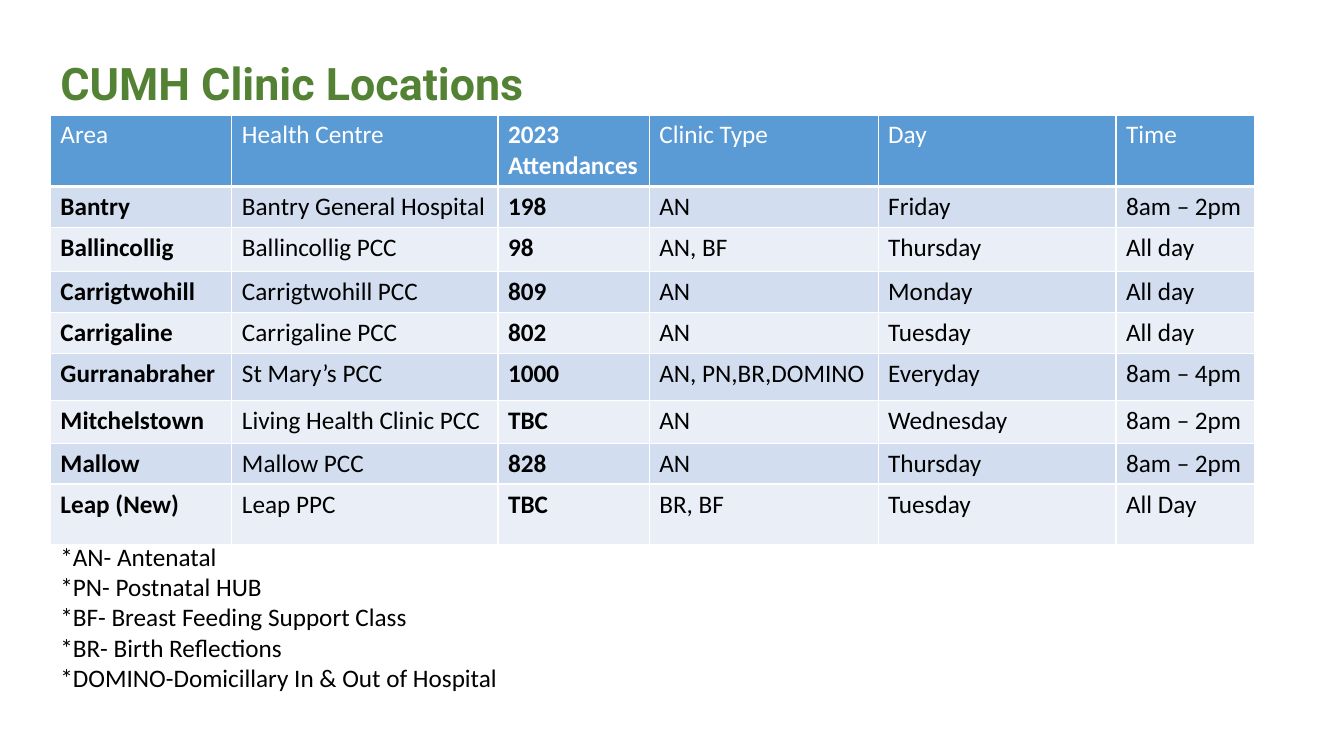
from lxml.etree import SubElement
from pptx import Presentation
from pptx.dml.color import RGBColor
from pptx.oxml.ns import qn
from pptx.util import Inches, Pt

AREAS = [
    ("Area", "Health Centre", "2023 Attendances", "Clinic Type", "Day", "Time"),
    ("Bantry", "Bantry General Hospital", "198", "AN", "Friday", "8am – 2pm"),
    ("Ballincollig", "Ballincollig PCC", "98", "AN, BF", "Thursday", "All day"),
    ("Carrigtwohill", "Carrigtwohill PCC", "809", "AN", "Monday", "All day"),
    ("Carrigaline", "Carrigaline PCC", "802", "AN", "Tuesday", "All day"),
    ("Gurranabraher", "St Mary’s PCC", "1000", "AN, PN,BR,DOMINO", "Everyday", "8am – 4pm"),
    ("Mitchelstown", "Living Health Clinic PCC", "TBC", "AN", "Wednesday", "8am – 2pm"),
    ("Mallow", "Mallow PCC", "828", "AN", "Thursday", "8am – 2pm"),
    ("Leap (New)", "Leap PPC", "TBC", "BR, BF", "Tuesday", "All Day"),
]
WIDTHS = [1.8, 2.64, 1.5, 2.27, 2.36, 1.37]
HEIGHTS = [0.37, 0.37, 0.44, 0.37, 0.37, 0.47, 0.42, 0.37, 0.6]
NOTES = [
    "*AN- Antenatal",
    "*PN- Postnatal HUB",
    "*BF- Breast Feeding Support Class",
    "*BR- Birth Reflections",
    "*DOMINO-Domicillary In & Out of Hospital",
]


def color(code):
    return RGBColor.from_string(code)


class Deck:
    white, black, green = "FFFFFF", "000000", "548235"
    head, bands = "5B9BD5", ("EAEFF7", "D2DEEF")

    def __init__(self, slide):
        self.slide = slide

    def style(self, frame, size, ink, bold=False, face="Calibri"):
        for para in frame.paragraphs:
            for run in para.runs:
                font = run.font
                font.name, font.size, font.bold = face, Pt(size), bold
                font.color.rgb = color(ink)

    def text(self, box, words, size, ink, bold=False, face="Calibri"):
        frame = self.slide.shapes.add_textbox(*map(Inches, box)).text_frame
        frame.word_wrap = True
        frame.text = words
        self.style(frame, size, ink, bold, face)

    def edge(self, cell, low):
        props = cell._tc.get_or_add_tcPr()
        for side, width in zip("LRTB", (1, 1, 1, low)):
            line = SubElement(props, qn("a:ln" + side), w=str(Pt(width)))
            fill = SubElement(line, qn("a:solidFill"))
            SubElement(fill, qn("a:srgbClr"), val=self.white)

    def table(self, box, rows, widths, heights, strong):
        shape = self.slide.shapes.add_table(
            len(rows), len(widths), *map(Inches, box))
        table = shape.table
        for col, width in zip(table.columns, widths):
            col.width = Inches(width)
        for row, height in zip(table.rows, heights):
            row.height = Inches(height)
        shape.height = Inches(box[3])
        for r, row in enumerate(rows):
            top = r == 0
            for c, words in enumerate(row):
                cell = table.cell(r, c)
                cell.text_frame.text = words
                bold = c in strong and not (top and c == 0)
                self.style(cell.text_frame, 18,
                           self.white if top else self.black, bold)
                self.edge(cell, 3 if top else 1)
                cell.fill.solid()
                cell.fill.fore_color.rgb = color(
                    self.head if top else self.bands[r % 2])


def main():
    show = Presentation()
    show.slide_width, show.slide_height = Inches(13.33), Inches(7.5)
    deck = Deck(show.slides.add_slide(show.slide_layouts[6]))

    # Clinic table, with area names and attendances in bold
    deck.table((0.5, 1.14, 11.94, 4.24), AREAS, WIDTHS, HEIGHTS, (0, 2))

    # Title
    deck.text((0.5, 0.5, 5.3, 0.64), "CUMH Clinic Locations",
              32, deck.green, True, "Roboto")

    # Key to the clinic types
    deck.text((0.5, 5.32, 4.91, 1.62), "\n".join(NOTES), 18, deck.black)

    show.save("out.pptx")


if __name__ == "__main__":
    main()
